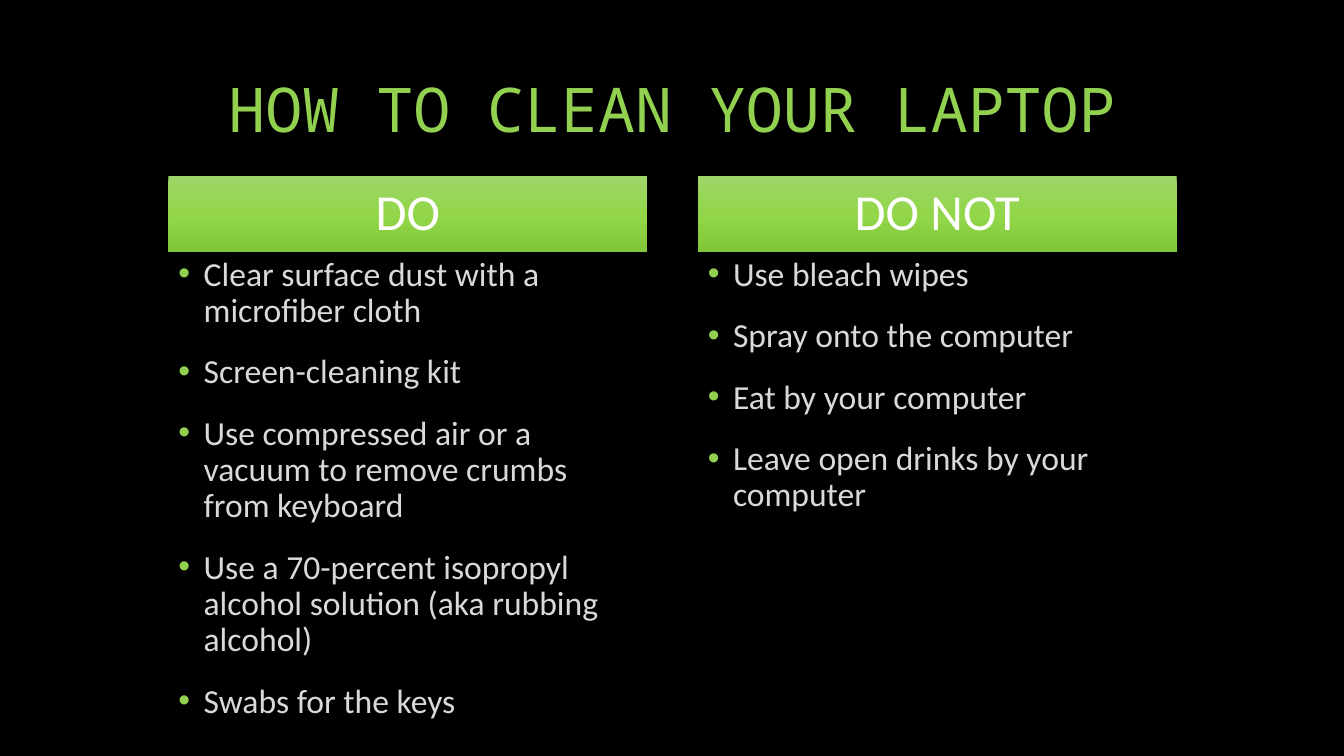
from copy import deepcopy

from lxml.etree import SubElement
from pptx import Presentation
from pptx.dml.color import RGBColor
from pptx.enum.text import MSO_ANCHOR as Anchor, MSO_AUTO_SIZE as AutoSize, PP_ALIGN as Align
from pptx.oxml.ns import qn
from pptx.util import Inches, Pt

GREEN = "92D050"
COLUMN_WIDTH = 4.75
COLUMNS = [
    (1.67, 4.83, "DO", [
        "Clear surface dust with a microfiber cloth",
        "Screen-cleaning kit",
        "Use compressed air or a vacuum to remove crumbs from keyboard",
        "Use a 70-percent isopropyl alcohol solution (aka rubbing alcohol)",
        "Swabs for the keys",
    ]),
    (6.92, 3.92, "DO NOT", [
        "Use bleach wipes",
        "Spray onto the computer",
        "Eat by your computer",
        "Leave open drinks by your computer",
    ]),
]


def place(box, left, top, width, height, anchor):
    box.left, box.top = Inches(left), Inches(top)
    box.width, box.height = Inches(width), Inches(height)
    frame = box.text_frame
    frame.word_wrap = True
    frame.auto_size = AutoSize.NONE
    frame.vertical_anchor = anchor
    return frame


def write(para, text, size, font, color, align):
    para.alignment = align
    para.line_spacing = 0.9
    span = para.add_run()
    span.text = text
    span.font.size = Pt(size)
    span.font.name = font
    span.font.bold = False
    span.font.color.rgb = RGBColor.from_string(color)


deck = Presentation()
deck.slide_width, deck.slide_height = Inches(13.33), Inches(7.5)
page = deck.slides.add_slide(deck.slide_layouts.get_by_name("Comparison"))
page.background.fill.solid()
page.background.fill.fore_color.rgb = RGBColor.from_string("000000")

# Title
title = place(page.shapes.title, 1.67, 0.25, 10, 1.25, Anchor.BOTTOM)
write(title.paragraphs[0], "HOW TO CLEAN YOUR LAPTOP", 44, "Noto Sans Mono", GREEN, Align.CENTER)

bodies = list(page.placeholders)[1:]
for (left, height, heading, tips), banner, body in zip(COLUMNS, bodies[::2], bodies[1::2]):
    # Green heading banner with a three-stop gradient
    frame = place(banner, left, 1.75, COLUMN_WIDTH, 0.75, Anchor.MIDDLE)
    frame.paragraphs[0].space_before = Pt(0)
    write(frame.paragraphs[0], heading, 36, "Calibri", "FFFFFF", Align.CENTER)
    banner.fill.gradient()
    banner.fill.gradient_angle = 270
    stop_list = banner._element.spPr.find(".//" + qn("a:gsLst"))
    stop_list.insert(1, deepcopy(stop_list[0]))
    for stop, position, color in zip(banner.fill.gradient_stops, (0, 0.5, 1),
                                     ("9ED669", "92D64A", "82C63A")):
        stop.position = position
        stop.color.rgb = RGBColor.from_string(color)

    # Bulleted tips
    frame = place(body, left, 2.5, COLUMN_WIDTH, height, Anchor.TOP)
    for number, tip in enumerate(tips):
        para = frame.add_paragraph() if number else frame.paragraphs[0]
        para.space_before = Pt(18)
        write(para, tip, 24, "Calibri", "D9D9D9", Align.LEFT)
        props = para._p.get_or_add_pPr()
        props.set("marL", str(Inches(0.25)))
        props.set("indent", str(Inches(-0.25)))
        bullet_color = SubElement(props, qn("a:buClr"))
        SubElement(bullet_color, qn("a:srgbClr"), val=GREEN)
        SubElement(props, qn("a:buFont"), typeface="Arial")
        SubElement(props, qn("a:buChar"), char="•")

deck.save("out.pptx")
